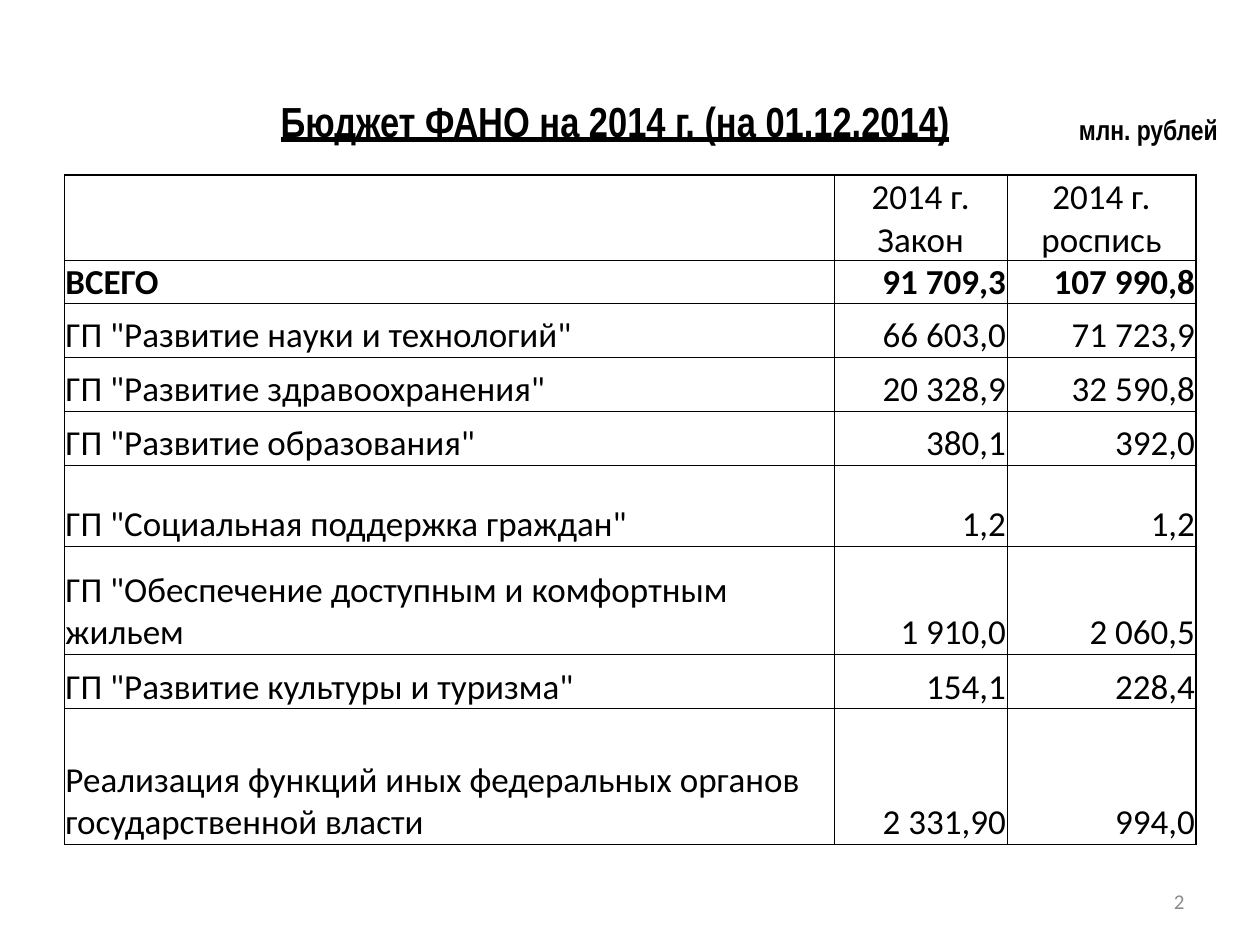
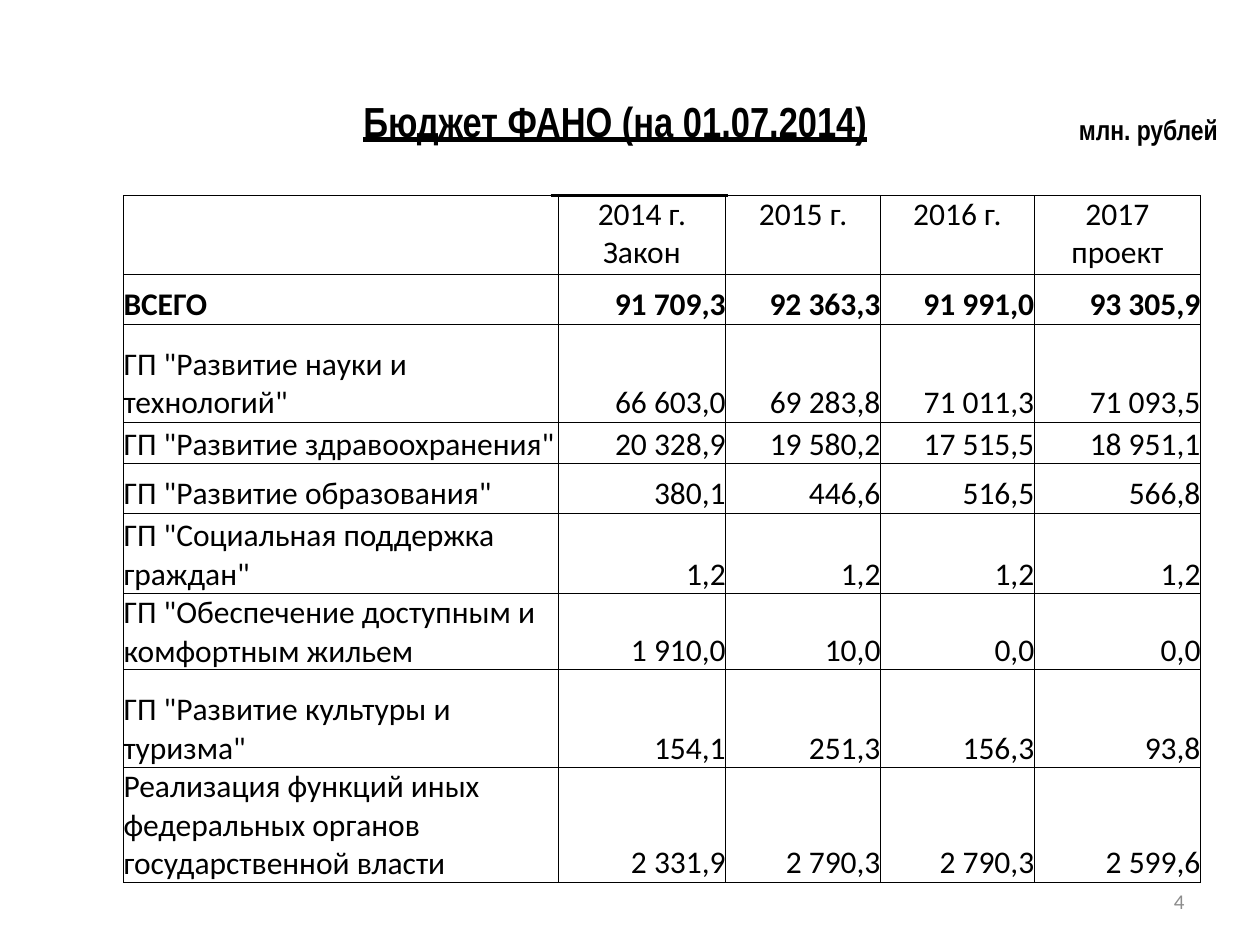
from dataclasses import dataclass

from lxml.etree import SubElement as Sub
from pptx import Presentation
from pptx.dml.color import RGBColor
from pptx.enum.shapes import MSO_CONNECTOR as Link
from pptx.enum.text import MSO_ANCHOR as Anchor, PP_ALIGN as Align
from pptx.oxml.ns import qn
from pptx.util import Cm, Pt

BLACK, GREY = "000000", "8C8C8C"
HEAD, BODY = "Arial Narrow", "Calibri"

LABELS = [
    "ВСЕГО",
    'ГП "Развитие науки и технологий"',
    'ГП "Развитие здравоохранения"',
    'ГП "Развитие образования"',
    'ГП "Социальная поддержка граждан"',
    'ГП "Обеспечение доступным и комфортным жильем',
    'ГП "Развитие культуры и туризма"',
    "Реализация функций иных федеральных органов государственной власти",
]


@dataclass
class Font:
    name: str
    size: float
    color: str = BLACK
    bold: bool = False
    line: bool = False


@dataclass
class Box:
    left: float
    top: float
    width: float
    height: float
    align: Align
    font: Font
    space: float = 1.0


@dataclass
class Grid:
    left: float
    top: float
    cols: list[float]
    rows: list[float]
    heads: list[str]
    anchors: list[Anchor]
    sums: list[list[str]]  # one list per year, in the order of LABELS
    size: float
    inset: float
    frame: float


@dataclass
class Page:
    title: str
    number: str
    grid: Grid
    rule: tuple[float, float] | None = None


# Text boxes that every slide shares
TITLE = Box(3.5, 1.93, 17.8, 1.19, Align.CENTER, Font(HEAD, 24, bold=True, line=True), 0.8)
NUMBER = Box(18.21, 17.65, 5.92, 1.02, Align.RIGHT, Font(BODY, 12, GREY))
UNIT = Box(21.23, 2.18, 3.84, 0.97, Align.CENTER, Font(HEAD, 16, bold=True), 0.8)

LAW = ["91 709,3", "66 603,0", "20 328,9", "380,1", "1,2", "1 910,0", "154,1"]

PAGES = [
    Page("Бюджет ФАНО на 2014 г. (на 01.12.2014)", "2", Grid(
        1.3, 3.53, [15.52, 3.48, 3.81],
        [1.09, 0.53, 1.09, 1.09, 1.09, 1.63, 2.18, 1.09, 2.74],
        ["2014 г. Закон", "2014 г. роспись"], [Anchor.BOTTOM, Anchor.MIDDLE],
        [LAW + ["2 331,90"],
         ["107 990,8", "71 723,9", "32 590,8", "392,0", "1,2", "2 060,5", "228,4", "994,0"]],
        size=20, inset=0.02, frame=1)),
    Page("Бюджет ФАНО (на 01.07.2014)", "4", Grid(
        2.49, 3.94, [8.76, 3.38, 3.12, 3.1, 3.35],
        [1.6, 0.99, 1.98, 0.84, 0.99, 1.63, 1.24, 1.98, 2.31],
        ["2014 г. Закон", "2015 г.", "2016 г.", "2017\nпроект"], [Anchor.TOP] * 4,
        [LAW + ["2 331,9"],
         ["92 363,3", "69 283,8", "19 580,2", "446,6", "1,2", "10,0", "251,3", "2 790,3"],
         ["91 991,0", "71 011,3", "17 515,5", "516,5", "1,2", "0,0", "156,3", "2 790,3"],
         ["93 305,9", "71 093,5", "18 951,1", "566,8", "1,2", "0,0", "93,8", "2 599,6"]],
        size=18, inset=0, frame=0.5), rule=(11.1, 14.68)),
]


def paint(code: str) -> RGBColor:
    return RGBColor.from_string(code)


def style(frame, font: Font, align: Align, space: float = 1.0) -> None:
    for para in frame.paragraphs:
        para.alignment = align
        para.line_spacing = space
        for run in para.runs:
            run.font.name = font.name
            run.font.size = Pt(font.size)
            run.font.bold = font.bold
            run.font.underline = font.line
            run.font.color.rgb = paint(font.color)


def write(slide, box: Box, text: str) -> None:
    shape = slide.shapes.add_textbox(Cm(box.left), Cm(box.top), Cm(box.width), Cm(box.height))
    frame = shape.text_frame
    frame.word_wrap = True
    frame.vertical_anchor = Anchor.MIDDLE
    frame.text = text
    style(frame, box.font, box.align, box.space)


def edge(cell, widths: dict[str, float]) -> None:
    props = cell._tc.get_or_add_tcPr()
    for side, width in widths.items():
        line = Sub(props, qn(f"a:ln{side}"), w=str(Pt(width)))
        Sub(Sub(line, qn("a:solidFill")), qn("a:srgbClr"), val=BLACK)


def draw_grid(slide, grid: Grid) -> None:
    last_row, last_col = len(grid.rows) - 1, len(grid.cols) - 1
    table = slide.shapes.add_table(
        last_row + 1, last_col + 1, Cm(grid.left), Cm(grid.top),
        Cm(sum(grid.cols)), Cm(sum(grid.rows))).table
    table.first_row = table.horz_banding = False
    for col, width in zip(table.columns, grid.cols):
        col.width = Cm(width)
    for row, height in zip(table.rows, grid.rows):
        row.height = Cm(height)

    # Each column is its heading followed by its values
    columns = [[""] + LABELS] + [[h] + s for h, s in zip(grid.heads, grid.sums)]
    for c, column in enumerate(columns):
        for r, text in enumerate(column):
            cell = table.cell(r, c)
            cell.margin_left = cell.margin_right = cell.margin_top = Cm(grid.inset)
            cell.margin_bottom = 0
            outer = {"L": c == 0, "R": c == last_col, "T": r == 0, "B": r == last_row}
            edge(cell, {side: grid.frame if out else 0.5 for side, out in outer.items()})
            cell.fill.background()
            cell.vertical_anchor = Anchor.BOTTOM if r or not c else grid.anchors[c - 1]
            cell.text_frame.text = text
            align = Align.CENTER if r == 0 else Align.RIGHT if c else Align.LEFT
            style(cell.text_frame, Font(BODY, grid.size, bold=r == 1), align)


def draw_rule(slide, start: float, end: float, top: float) -> None:
    line = slide.shapes.add_connector(Link.STRAIGHT, Cm(start), Cm(top), Cm(end), Cm(top))
    line.line.color.rgb = paint(BLACK)
    line.line.width = Pt(1.5)
    Sub(line._element.spPr, qn("a:effectLst"))


def main() -> None:
    deck = Presentation()
    deck.slide_width, deck.slide_height = Cm(25.4), Cm(19.05)
    for page in PAGES:
        slide = deck.slides.add_slide(deck.slide_layouts[6])
        write(slide, TITLE, page.title)
        write(slide, NUMBER, page.number)
        write(slide, UNIT, "млн. рублей")
        draw_grid(slide, page.grid)
        if page.rule:
            draw_rule(slide, *page.rule, page.grid.top)
    deck.save("out.pptx")


if __name__ == "__main__":
    main()
